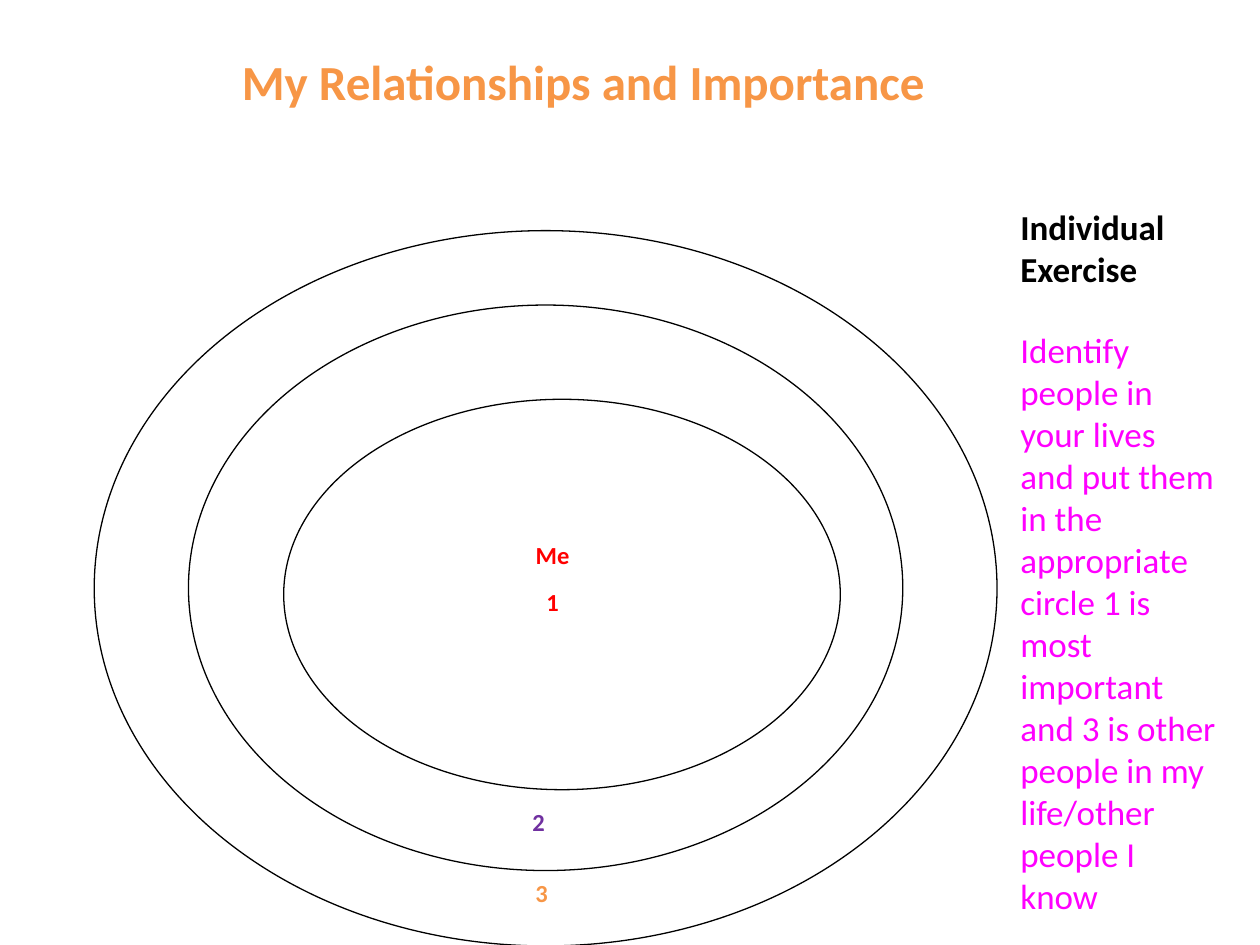
from dataclasses import dataclass

from pptx import Presentation
from pptx.dml.color import RGBColor
from pptx.enum.shapes import MSO_SHAPE
from pptx.enum.text import MSO_ANCHOR, PP_ALIGN
from pptx.util import Cm, Pt

OVAL, RECTANGLE = MSO_SHAPE.OVAL, MSO_SHAPE.RECTANGLE
TOP, MIDDLE = MSO_ANCHOR.TOP, MSO_ANCHOR.MIDDLE
LEFT, CENTER = PP_ALIGN.LEFT, PP_ALIGN.CENTER


@dataclass(frozen=True)
class Theme:
    font: str = "Calibri"
    title_size: int = 28
    body_size: int = 20
    label_size: int = 14
    white: str = "FFFFFF"
    black: str = "000000"
    orange: str = "F79646"
    magenta: str = "FF00FF"
    red: str = "FF0000"
    purple: str = "7030A0"


theme = Theme()


def add_plain_shape(kind, box, line_color=None):
    shape = slide.shapes.add_shape(kind, *map(Cm, box))
    shape.shadow.inherit = False
    shape.fill.solid()
    shape.fill.fore_color.rgb = RGBColor.from_string(theme.white)
    if line_color:
        shape.line.color.rgb = RGBColor.from_string(line_color)
        shape.line.width = Pt(0.75)
    else:
        shape.line.fill.background()
    return shape


def write_text(shape, lines, size, anchor=TOP, align=LEFT, space_after=0):
    """Write one paragraph for each (text, color, bold) line."""
    frame = shape.text_frame
    frame.word_wrap = True
    frame.vertical_anchor = anchor
    for index, (text, color, bold) in enumerate(lines):
        paragraph = frame.add_paragraph() if index else frame.paragraphs[0]
        paragraph.alignment = align
        paragraph.space_after = Pt(space_after)
        run = paragraph.add_run()
        run.text = text
        run.font.color.rgb = RGBColor.from_string(color)
        font_format = {"name": theme.font, "size": Pt(size), "bold": bold}
        for name, value in font_format.items():
            setattr(run.font, name, value)


presentation = Presentation()
presentation.slide_width, presentation.slide_height = Cm(25.4), Cm(19.05)
slide = presentation.slides.add_slide(presentation.slide_layouts[6])

# Title, lifted above the middle of its box by the bottom margin
title = slide.shapes.add_textbox(Cm(0.43), Cm(0.64), Cm(22.86), Cm(3.18))
write_text(title, [("My Relationships and Importance", theme.orange, True)],
           theme.title_size, anchor=MIDDLE, align=CENTER)
title.text_frame.margin_bottom = Cm(1.33)
title.text_frame.margin_right = Cm(0.46)

# Instructions on the right
instructions = slide.shapes.add_textbox(Cm(20.32), Cm(4.02), Cm(4.45), Cm(14.7))
write_text(instructions, [
    ("Individual Exercise", theme.black, True),
    ("Identify people in your lives and put them in the appropriate circle "
     "1 is most important and 3 is other people in my life/other people I know",
     theme.magenta, False),
], theme.body_size)
instructions.text_frame.paragraphs[1].space_before = Pt(22)

# Circles, from the outside in: left, top, width, height
circles = [
    (1.9, 4.65, 18.2, 14.42),
    (3.8, 6.15, 14.4, 11.4),
    (5.72, 8.05, 11.22, 7.87),
]
for box in circles:
    add_plain_shape(OVAL, box, theme.black)

# Circle labels
labels = [
    (["Me", "1"], theme.red, (10.16, 10.77, 1.96, 1.7)),
    (["2"], theme.purple, (10.36, 16.15, 1, 1.22)),
    (["3"], theme.orange, (10.26, 17.58, 1.32, 1.2)),
]
for texts, color, box in labels:
    label = add_plain_shape(RECTANGLE, box)
    write_text(label, [(text, color, True) for text in texts],
               theme.label_size, align=CENTER, space_after=10)

presentation.save("out.pptx")
